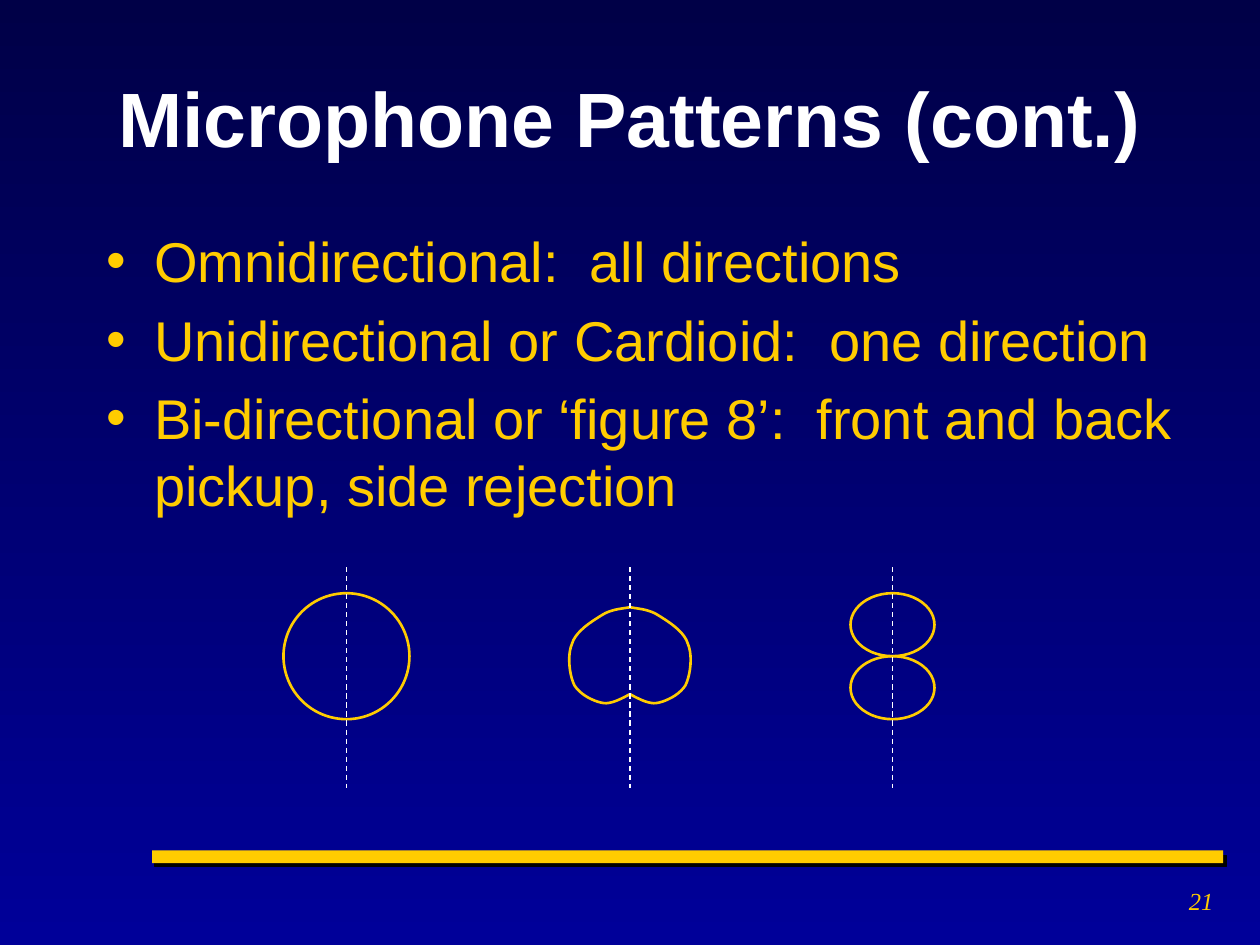
from lxml import etree
from pptx import Presentation
from pptx.dml.color import RGBColor
from pptx.enum.dml import MSO_LINE
from pptx.enum.shapes import MSO_CONNECTOR, MSO_SHAPE
from pptx.enum.text import MSO_ANCHOR, PP_ALIGN
from pptx.oxml.ns import qn
from pptx.util import Pt

GOLD, WHITE, BLACK = "FFCC00", "FFFFFF", "000000"


def rgb(value):
    return RGBColor.from_string(value)


def add_text(p, text, **font):
    """Add a run with the given font values; color is a hex string."""
    r = p.add_run()
    r.text = text
    r.font.color.rgb = rgb(font.pop("color"))
    for name, value in font.items():
        setattr(r.font, name, value)


prs = Presentation()
prs.slide_width, prs.slide_height = Pt(720), Pt(540)
s = prs.slides.add_slide(prs.slide_layouts[5])

# Background gradient, dark at the top
fill = s.background.fill
fill.gradient()
fill.gradient_angle = 270
for stop, color, position in zip(fill.gradient_stops, ("000047", "000099"), (0, 1)):
    stop.color.rgb = rgb(color)
    stop.position = position

# Gold bar with its black shadow behind
for color, box in ((BLACK, (88.5, 489, 612.5, 6)), (GOLD, (87, 486, 612, 7.2))):
    sp = s.shapes.add_shape(MSO_SHAPE.RECTANGLE, *map(Pt, box))
    sp.shadow.inherit = False
    sp.fill.solid()
    sp.fill.fore_color.rgb = rgb(color)
    if color == BLACK:
        sp.line.color.rgb = rgb(BLACK)
        sp.line.width = Pt(0.75)
    else:
        sp.line.fill.background()

# Slide number
tf = s.shapes.add_textbox(Pt(583), Pt(502.5), Pt(117.5), Pt(37.5)).text_frame
tf.word_wrap = True
p = tf.paragraphs[0]
p.alignment = PP_ALIGN.RIGHT
add_text(p, "21", name="Times New Roman", size=Pt(14), italic=True, color=GOLD)

# Title
title = s.shapes.title
title.left, title.top, title.width, title.height = map(Pt, (36, 21.6, 648, 90))
title.text_frame.vertical_anchor = MSO_ANCHOR.MIDDLE
p = title.text_frame.paragraphs[0]
p.alignment = PP_ALIGN.CENTER
add_text(p, "Microphone Patterns (cont.)", name="Arial", size=Pt(44), bold=True, color=WHITE)

# Bullets
bullets = [
    "Omnidirectional:  all directions",
    "Unidirectional or Cardioid:  one direction",
    "Bi-directional or ‘figure 8’:  front and back pickup, side rejection",
]
tf = s.shapes.add_textbox(Pt(54), Pt(126), Pt(630), Pt(356.5)).text_frame
tf.word_wrap = True
for i, text in enumerate(bullets):
    p = tf.paragraphs[0] if i == 0 else tf.add_paragraph()
    p.space_before = Pt(6.4 if i else 0)
    pPr = p._p.get_or_add_pPr()
    pPr.set("marL", str(Pt(27)))
    pPr.set("indent", str(-Pt(27)))
    etree.SubElement(pPr, qn("a:buFont")).set("typeface", "Arial")
    etree.SubElement(pPr, qn("a:buChar")).set("char", "•")
    add_text(p, text, name="Arial", size=Pt(32), color=GOLD)

# Pickup patterns: circle, cardioid and figure 8, each on a dashed axis
omni_x, cardioid_x, figure8_x = 198, 360, 510
outlines = []

# Right half of the cardioid as Bézier segments: distance from the axis, y
cardioid_start = (0, 347)
cardioid_curves = [
    ((2.9, 347.8), (10.1, 347.8), (15.8, 351.4)),
    ((21.6, 355), (31, 360.7), (33.1, 367.9)),
    ((36, 374.4), (34.6, 385.9), (31.7, 391.7)),
    ((28.1, 397.4), (20.2, 401), (15.1, 401.8)),
    ((10.1, 402.5), (2.9, 398.2), (0, 396.7)),
]
steps = 10
half = [cardioid_start]
for c1, c2, end in cardioid_curves:
    start = half[-1]
    for n in range(1, steps + 1):
        t = n / steps
        u = 1 - t
        half.append(tuple(
            u**3 * a + 3 * u**2 * t * b + 3 * u * t**2 * c + t**3 * d
            for a, b, c, d in zip(start, c1, c2, end)
        ))
for side in (1, -1):
    points = [(Pt(cardioid_x + side * dx), Pt(y)) for dx, y in half]
    builder = s.shapes.build_freeform(*points[0])
    builder.add_line_segments(points[1:], close=False)
    outlines.append(builder.convert_to_shape())

for x, top, width, height in (
    (omni_x, 339, 72, 72),
    (figure8_x, 339, 48, 36),
    (figure8_x, 375, 48, 36),
):
    outlines.append(s.shapes.add_shape(
        MSO_SHAPE.OVAL, Pt(x - width / 2), Pt(top), Pt(width), Pt(height)
    ))

for sp in outlines:
    sp.shadow.inherit = False
    sp.fill.background()
    sp.line.color.rgb = rgb(GOLD)
    sp.line.width = Pt(1.5)

for x in (omni_x, cardioid_x, figure8_x):
    axis = s.shapes.add_connector(MSO_CONNECTOR.STRAIGHT, Pt(x), Pt(324), Pt(x), Pt(450))
    axis.line.color.rgb = rgb(WHITE)
    axis.line.width = Pt(0.75)
    axis.line.dash_style = MSO_LINE.DASH
    etree.SubElement(axis._element.spPr, qn("a:effectLst"))

prs.save("out.pptx")
